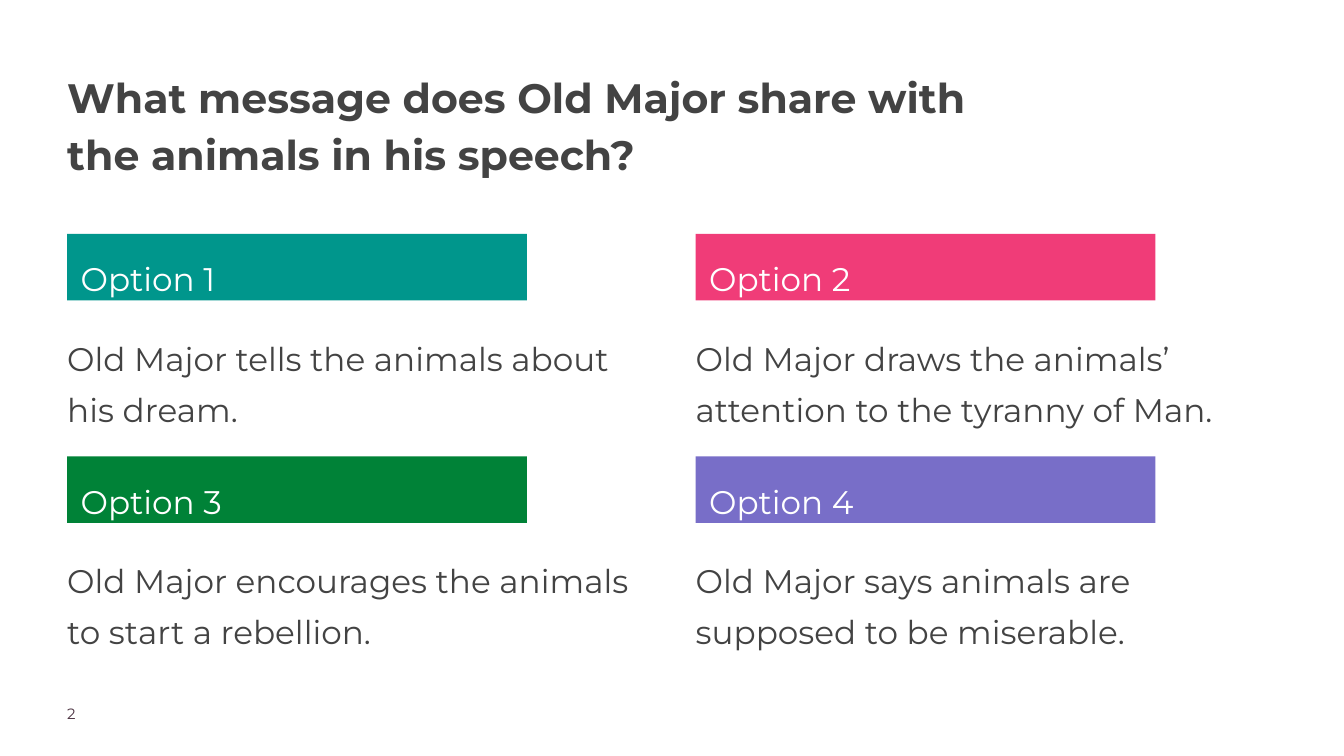
from pptx import Presentation
from pptx.dml.color import RGBColor
from pptx.enum.shapes import MSO_SHAPE
from pptx.enum.text import MSO_ANCHOR, PP_ALIGN
from pptx.util import Pt

COLORS = {
    "text": "434343",
    "label": "FFFFFF",
    "number": "4B3241",
    "teal": "00968C",
    "pink": "F03C78",
    "green": "008237",
    "violet": "786EC8",
}


class QuizSlide:
    font = "Montserrat"

    def __init__(self, slide):
        self.slide = slide

    def color(self, name):
        return RGBColor.from_string(COLORS[name])

    def set_words(self, shape, words, size, color, spacing=1.0, bold=False, inset=0):
        frame = shape.text_frame
        frame.text = words
        frame.word_wrap = True
        frame.vertical_anchor = MSO_ANCHOR.TOP
        frame.margin_left = frame.margin_right = Pt(inset)
        frame.margin_top = frame.margin_bottom = Pt(inset)
        line = frame.paragraphs[0]
        line.alignment = PP_ALIGN.LEFT
        line.line_spacing = spacing
        font = line.runs[0].font
        font.name, font.size, font.bold = self.font, Pt(size), bold
        font.color.rgb = self.color(color)

    def text(self, left, top, width, height, words, size, color="text", **style):
        box = self.slide.shapes.add_textbox(Pt(left), Pt(top), Pt(width), Pt(height))
        self.set_words(box, words, size, color, **style)

    def banner(self, left, top, width, height, words, fill):
        bar = self.slide.shapes.add_shape(
            MSO_SHAPE.RECTANGLE, Pt(left), Pt(top), Pt(width), Pt(height))
        bar.shadow.inherit = False
        bar.fill.solid()
        bar.fill.fore_color.rgb = self.color(fill)
        bar.line.fill.background()
        self.set_words(bar, words, 35, "label", spacing=1.3, inset=14.4)


def main():
    deck = Presentation()
    deck.slide_width, deck.slide_height = Pt(1440), Pt(810)
    quiz = QuizSlide(deck.slides.add_slide(deck.slide_layouts[6]))

    # Question
    quiz.text(72, 69.8, 1040, 128,
              "What message does Old Major share with the animals in his speech?",
              44, spacing=1.15, bold=True)

    # Answer options in a two by two grid
    options = [
        ("teal", "Old Major tells the animals about his dream."),
        ("pink", "Old Major draws the animals’ attention to the tyranny of Man."),
        ("green", "Old Major encourages the animals to start a rebellion."),
        ("violet", "Old Major says animals are supposed to be miserable."),
    ]
    for index, (fill, answer) in enumerate(options):
        row, column = divmod(index, 2)
        left = 72 + column * 673.4
        top = 250.6 + row * 238.4
        quiz.banner(left, top, 492.5, 71.3, f"Option {index + 1}", fill)
        quiz.text(left, top + 99.4, 622, 99.4, answer, 35, spacing=1.3)

    # Page number
    quiz.text(72, 754.6, 113, 28, "2", 16, "number")

    deck.save("out.pptx")


if __name__ == "__main__":
    main()
